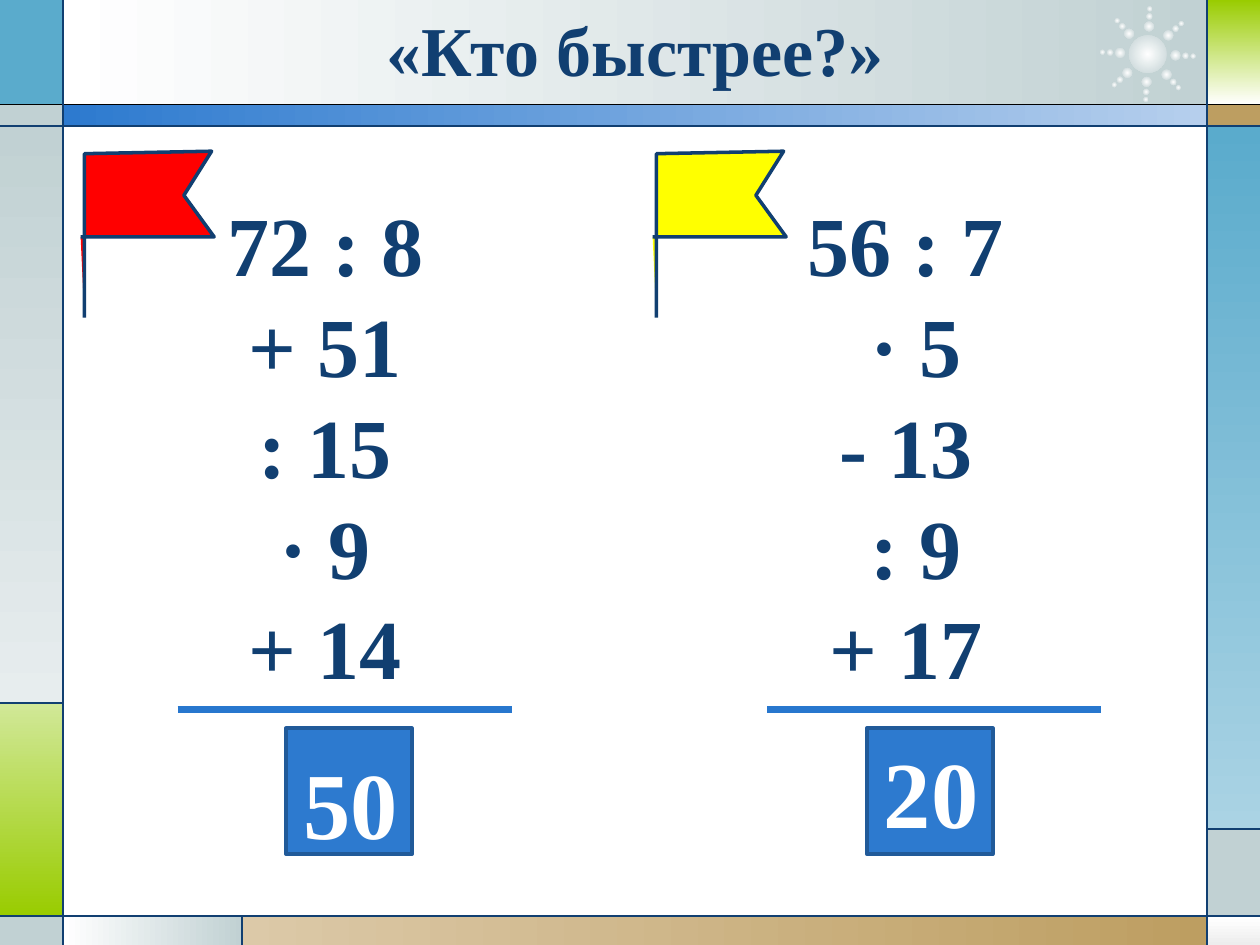
from dataclasses import dataclass
from math import cos, radians, sin

from lxml import etree
from pptx import Presentation
from pptx import util as u
from pptx.dml.color import RGBColor
from pptx.enum import shapes, text
from pptx.oxml import parse_xml
from pptx.oxml.ns import nsdecls, qn


@dataclass(frozen=True)
class Theme:
    font: str = "Times New Roman"
    ink: str = "113F71"
    black: str = "000000"
    white: str = "FFFFFF"
    blue: str = "2D7ACF"
    pale: str = "B6CFED"
    rule: str = "2877CE"
    edge: str = "215A99"
    sky: str = "5AABCC"
    mist: str = "AAD3E4"
    gray: str = "C1D1D3"
    fog: str = "E7EDEE"
    snow: str = "EDEDED"
    lime: str = "99CC00"
    mint: str = "D1E898"
    tan: str = "BD9E61"
    sand: str = "DCC9A8"
    red: str = "FF0000"
    yellow: str = "FFFF00"
    head: int = 40
    body: int = 48
    sum: int = 54
    thin: float = 0.75
    mid: float = 2
    thick: float = 4


T = Theme()
COLS = [0, 0.5, 1.92, 9.58, 10]
ROWS = [0, 0.83, 1, 5.58, 6.58, 7.27, 7.5]
RIGHT, DOWN = 0, 270
FLAG = [(0, 0.68), (0.17, 0.68), (1.06, 0.68), (0.82, 0.35),
        (1.04, 0), (0.03, 0.02), (0.03, 1.32)]

TILES = [
    (1, 0, 3, 1, (T.white, T.gray), RIGHT),
    (0, 0, 1, 1, (T.sky,), None),
    (0, 1, 1, 2, (T.gray,), None),
    (0, 2, 1, 3, (T.gray, T.fog), DOWN),
    (0, 3, 1, 5, (T.mint, T.lime), DOWN),
    (0, 5, 1, 6, (T.gray,), None),
    (1, 5, 2, 6, (T.white, T.gray), RIGHT),
    (2, 5, 3, 6, (T.sand, T.tan), RIGHT),
    (3, 5, 4, 6, (T.white, T.snow), DOWN),
    (3, 4, 4, 5, (T.gray,), None),
    (3, 2, 4, 4, (T.sky, T.mist), DOWN),
    (3, 1, 4, 2, (T.tan,), None),
    (3, 0, 4, 1, (T.lime, T.white), DOWN),
    (1, 1, 3, 2, (T.blue, T.pale), RIGHT),
]
SEAMS = [(0, 1, 4, 1), (0, 2, 4, 2), (0, 5, 4, 5), (1, 0, 1, 6),
         (3, 0, 3, 6), (0, 3, 1, 3), (2, 5, 2, 6), (3, 4, 4, 4)]


def rgb(hue):
    return RGBColor.from_string(hue)


def paint(shape, hues, turn=None):
    fill = shape.fill
    if len(hues) == 1:
        fill.solid()
        fill.fore_color.rgb = rgb(hues[0])
        return
    fill.gradient()
    for stop, hue in zip(fill.gradient_stops, hues):
        stop.color.rgb = rgb(hue)
    if turn is not None:
        fill.gradient_angle = turn


def stroke(shape, hue, size):
    shape.line.color.rgb = rgb(hue)
    shape.line.width = u.Pt(size)


def block(slide, kind, x, y, w, h, hues, turn=None):
    shape = slide.shapes.add_shape(kind, *map(u.Inches, (x, y, w, h)))
    shape.shadow.inherit = False
    paint(shape, hues, turn)
    shape.line.fill.background()
    return shape


def rule(slide, x, y, x2, y2, hue, size):
    line = slide.shapes.add_connector(
        shapes.MSO_CONNECTOR.STRAIGHT, *map(u.Inches, (x, y, x2, y2)))
    stroke(line, hue, size)
    etree.SubElement(line.element.spPr, qn("a:effectLst"))


def write(shape, rows, size, hue):
    frame = shape.text_frame
    frame.text = "\n".join(rows)
    frame.word_wrap = True
    frame.auto_size = text.MSO_AUTO_SIZE.SHAPE_TO_FIT_TEXT
    frame.vertical_anchor = text.MSO_ANCHOR.TOP
    for para in frame.paragraphs:
        para.alignment = text.PP_ALIGN.CENTER
        for run in para.runs:
            run.font.name = T.font
            run.font.size = u.Pt(size)
            run.font.bold = True
            run.font.color.rgb = rgb(hue)


def label(slide, x, y, w, h, rows, size, hue):
    box = slide.shapes.add_textbox(*map(u.Inches, (x, y, w, h)))
    write(box, rows, size, hue)


def dot(slide, x, y, size):
    shape = block(slide, shapes.MSO_SHAPE.OVAL, x - size / 2, y - size / 2,
                  size, size, (T.white, T.gray))
    lin = shape.element.spPr.find(".//" + qn("a:lin"))
    lin.getparent().replace(lin, parse_xml(
        f'<a:path {nsdecls("a")} path="circle">'
        '<a:fillToRect l="50000" t="50000" r="50000" b="50000"/></a:path>'))


def star(slide, x, y):
    dot(slide, x, y, 0.3)
    for ray in range(8):
        turn = radians(45 * ray + 2.5)
        for reach, size in ((0.22, 0.08), (0.3, 0.05), (0.36, 0.04)):
            dot(slide, x + reach * cos(turn), y + reach * sin(turn), size)


def flag(slide, x, y, hue):
    pts = [(u.Inches(x + dx), u.Inches(y + dy)) for dx, dy in FLAG]
    pen = slide.shapes.build_freeform(*pts[0])
    pen.add_line_segments(pts[1:], close=False)
    shape = pen.convert_to_shape()
    shape.shadow.inherit = False
    paint(shape, (hue,))
    stroke(shape, T.ink, T.mid)


def frame(slide):
    for c, r, c2, r2, hues, turn in TILES:
        block(slide, shapes.MSO_SHAPE.RECTANGLE, COLS[c], ROWS[r],
              COLS[c2] - COLS[c], ROWS[r2] - ROWS[r], hues, turn)
    star(slide, 9.11, 0.43)
    for n, (c, r, c2, r2) in enumerate(SEAMS):
        rule(slide, COLS[c], ROWS[r], COLS[c2], ROWS[r2],
             T.ink if n else T.black, T.thin)


def title(slide, words):
    head = slide.shapes.title
    head.left, head.top, head.width, head.height = map(
        u.Inches, (0.86, 0, 8.36, 0.77))
    write(head, [words], T.head, T.ink)
    head.element.getparent().append(head.element)


def chain(slide, x, bar, pole, hue, steps, total, drop):
    label(slide, x, 1.48, 3.28, 4.75, steps, T.body, T.ink)
    rule(slide, bar, 5.63, bar + 2.65, 5.63, T.rule, T.thick)
    box = block(slide, shapes.MSO_SHAPE.RECTANGLE, x + 1.33, 5.78, 1, 1,
                (T.blue,))
    stroke(box, T.edge, T.mid)
    label(slide, x + 1.33, 5.78 + drop, 1.02, 1.01, [total], T.sum, T.white)
    flag(slide, pole, 1.2, hue)


def main():
    deck = Presentation()
    deck.slide_width, deck.slide_height = u.Inches(10), u.Inches(7.5)
    slide = deck.slides.add_slide(deck.slide_layouts[5])
    frame(slide)
    title(slide, "«Кто быстрее?»")
    chain(slide, 0.94, 1.41, 0.64, T.red,
          ["72 : 8", "+ 51", ": 15", "· 9", "+ 14"], "50", 0.08)
    chain(slide, 5.55, 6.09, 5.18, T.yellow,
          ["56 : 7", " · 5", "- 13", " : 9", "+ 17"], "20", 0)
    deck.save("out.pptx")


if __name__ == "__main__":
    main()
